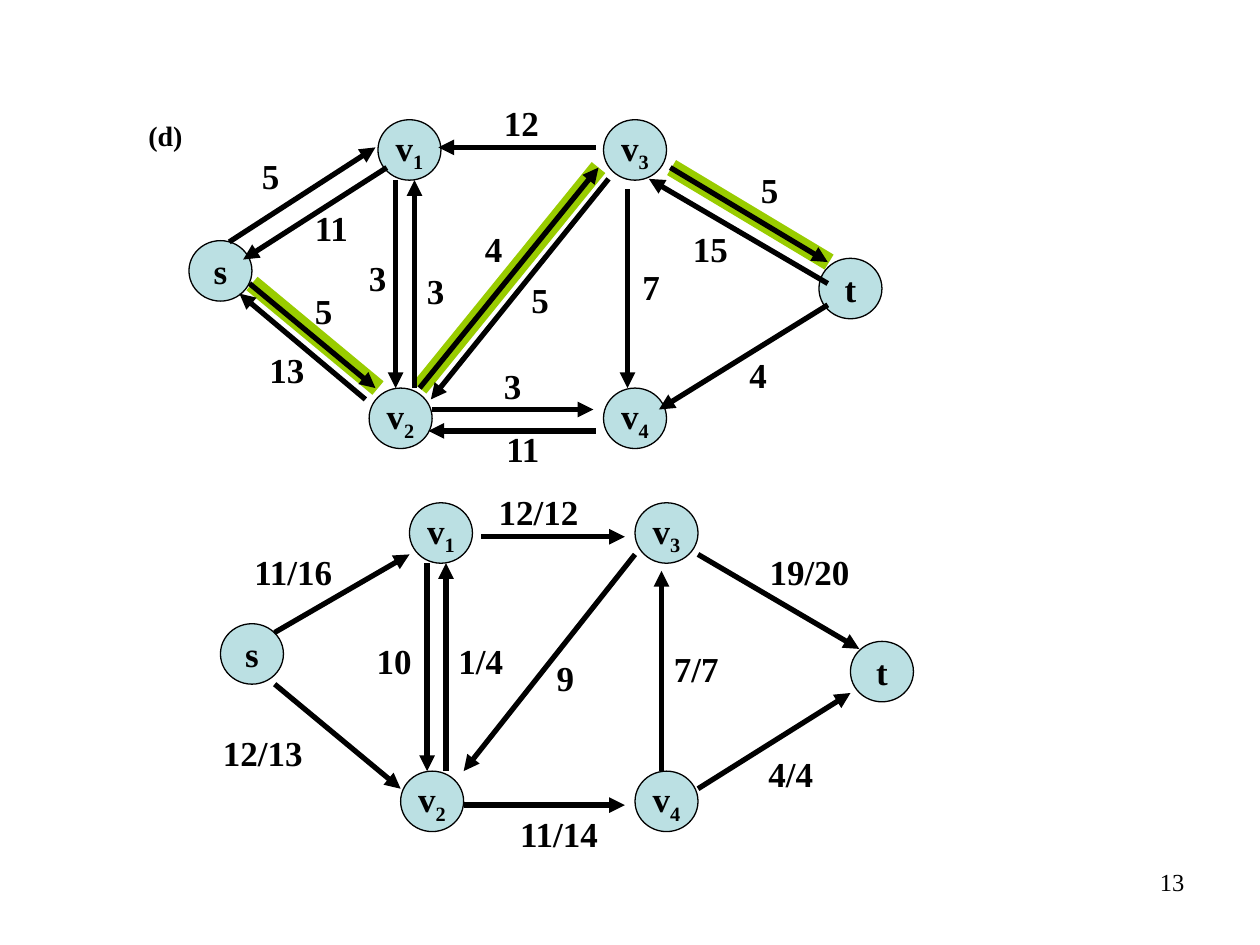
"""Build a slide with a residual network (d) above the flow network it belongs to."""
import pptx
import pptx.dml.color
import pptx.enum.shapes
import pptx.enum.text
import pptx.oxml.ns
import pptx.util
from lxml import etree

Inches = pptx.util.Inches
Pt = pptx.util.Pt
ALIGN = pptx.enum.text.PP_ALIGN
AUTO_SIZE = pptx.enum.text.MSO_AUTO_SIZE

BLACK = pptx.dml.color.RGBColor(0x00, 0x00, 0x00)
NODE_BLUE = pptx.dml.color.RGBColor(0xBB, 0xE0, 0xE3)
PATH_GREEN = pptx.dml.color.RGBColor(0x99, 0xCC, 0x00)

LABEL_WIDTHS = {1: 0.34, 2: 0.48, 3: 0.56, 5: 0.84}
NODES = [("s", 1.5, 1.91), ("v4", 4.79, 3.08), ("v2", 2.93, 3.08),
         ("v3", 4.79, 0.95), ("v1", 3, 0.95), ("t", 6.5, 2.05)]
FLOW_SHIFT = (0.25, 3.04)

AUGMENTING_PATH = [(2, 2.25, 3, 3.08), (3.33, 3.08, 4.75, 1.33), (5.33, 1.33, 6.58, 2.08)]
RESIDUAL_EDGES = [
    (1.82, 1.92, 2.98, 1.17), (3.07, 1.33, 1.93, 2.06),
    (3.14, 1.43, 3.14, 3.08), (3.29, 3.08, 3.29, 1.43),
    (1.98, 2.25, 2.98, 3.08), (2.9, 3.17, 1.9, 2.33),
    (4.83, 1.42, 3.42, 3.17), (3.33, 3.08, 4.75, 1.33),
    (4.73, 1.17, 3.48, 1.17), (4.98, 1.5, 4.98, 3.08),
    (3.43, 3.25, 4.71, 3.25), (4.73, 3.42, 3.4, 3.42),
    (6.57, 2.42, 5.23, 3.25), (5.32, 1.33, 6.57, 2.08),
    (6.57, 2.25, 5.15, 1.42),
]
RESIDUAL_LABELS = [
    ("5", 1.98, 1.18), ("11", 2.4, 1.59), ("5", 2.4, 2.25), ("13", 2.04, 2.72),
    ("3", 2.83, 1.99), ("3", 3.29, 2.09), ("4", 3.75, 1.76), ("5", 4.12, 2.16),
    ("12", 3.9, 0.76), ("7", 5, 2.06), ("3", 3.9, 2.84), ("11", 3.92, 3.34),
    ("4", 5.85, 2.76), ("5", 5.94, 1.29), ("15", 5.4, 1.76),
]
FLOW_EDGES = [
    (2.18, 5.02, 3.25, 4.4), (3.39, 4.47, 3.39, 6.12), (3.54, 6.12, 3.54, 4.47),
    (2.18, 5.43, 3.18, 6.26), (5.04, 4.4, 3.68, 6.12), (3.82, 4.26, 4.96, 4.26),
    (5.25, 6.12, 5.25, 4.53), (3.68, 6.39, 4.96, 6.39), (5.54, 6.26, 6.75, 5.5),
    (5.54, 4.4, 6.82, 5.15),
]
FLOW_LABELS = [
    ("11/16", 1.92, 4.32), ("12/13", 1.67, 5.76), ("10", 2.89, 5.03),
    ("1/4", 3.54, 5.03), ("9", 4.32, 5.16), ("7/7", 5.25, 5.09),
    ("11/14", 4.03, 6.4), ("4/4", 6, 5.92), ("19/20", 6.01, 4.32),
    ("12/12", 3.86, 3.84),
]


class GraphSlide:
    """Hold the graph style and the slide it is drawn on."""

    font_name = "Times New Roman"
    label_size = 20

    def __init__(self, slide):
        self.shapes = slide.shapes

    def style_run(self, run, size, bold=True):
        run.font.name = self.font_name
        run.font.size = Pt(size)
        run.font.bold = bold
        run.font.color.rgb = BLACK

    def text(self, words, left, top, width, height, size, bold=True, align=ALIGN.LEFT, wrap=False):
        frame = self.shapes.add_textbox(
            Inches(left), Inches(top), Inches(width), Inches(height)).text_frame
        frame.word_wrap = wrap
        frame.auto_size = AUTO_SIZE.NONE if wrap else AUTO_SIZE.SHAPE_TO_FIT_TEXT
        frame.text = words
        frame.paragraphs[0].alignment = align
        self.style_run(frame.paragraphs[0].runs[0], size, bold)

    def label(self, words, left, top):
        self.text(words, left, top, LABEL_WIDTHS[len(words)], 0.43, self.label_size)

    def node(self, name, left, top):
        circle = self.shapes.add_shape(
            pptx.enum.shapes.MSO_SHAPE.OVAL,
            Inches(left), Inches(top), Inches(0.5), Inches(0.48))
        circle.shadow.inherit = False
        circle.fill.solid()
        circle.fill.fore_color.rgb = NODE_BLUE
        circle.line.color.rgb = BLACK
        circle.line.width = Pt(0.75)
        frame = circle.text_frame
        frame.word_wrap = False
        frame.vertical_anchor = pptx.enum.text.MSO_ANCHOR.MIDDLE
        caption = frame.paragraphs[0]
        caption.alignment = ALIGN.CENTER
        for position, letter in enumerate(name):
            run = caption.add_run()
            run.text = letter
            self.style_run(run, self.label_size)
            if position:
                run.font._element.set("baseline", "-25000")

    def line(self, ends, color, width):
        connector = self.shapes.add_connector(
            pptx.enum.shapes.MSO_CONNECTOR.STRAIGHT, *map(Inches, ends))
        connector.line.color.rgb = color
        connector.line.width = Pt(width)
        etree.SubElement(connector._element.spPr, pptx.oxml.ns.qn("a:effectLst"))
        return connector

    def edge(self, ends):
        outline = self.line(ends, BLACK, 3).line._get_or_add_ln()
        etree.SubElement(outline, pptx.oxml.ns.qn("a:tailEnd"), type="triangle")

    def graph(self, shift, edges, labels):
        for name, left, top in NODES:
            self.node(name, left + shift[0], top + shift[1])
        for ends in edges:
            self.edge(ends)
        for words, left, top in labels:
            self.label(words, left, top)


def main():
    presentation = pptx.Presentation()
    presentation.slide_width = Inches(10)
    presentation.slide_height = Inches(7.5)
    networks = GraphSlide(presentation.slides.add_slide(presentation.slide_layouts[6]))

    networks.text("13", 7.17, 6.83, 2.33, 0.52, 14, bold=False, align=ALIGN.RIGHT, wrap=True)
    for ends in AUGMENTING_PATH:
        networks.line(ends, PATH_GREEN, 10)
    networks.text("(d)", 1.08, 0.89, 0.47, 0.37, 16)
    networks.graph(FLOW_SHIFT, FLOW_EDGES, FLOW_LABELS)
    networks.graph((0, 0), RESIDUAL_EDGES, RESIDUAL_LABELS)

    presentation.save("out.pptx")


if __name__ == "__main__":
    main()
